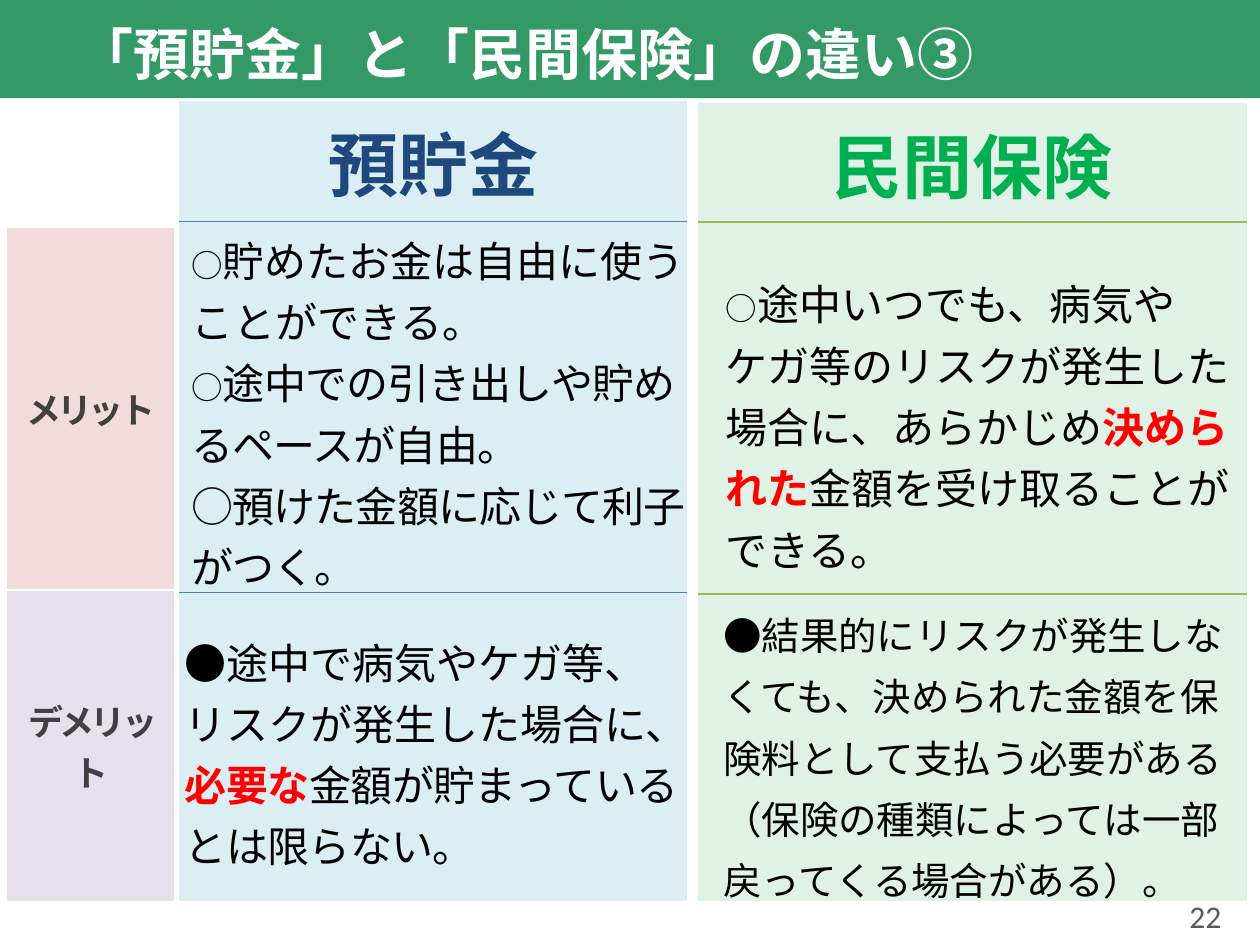
from lxml.etree import SubElement as Sub
from pptx import Presentation
from pptx.dml.color import RGBColor as Rgb
from pptx.enum.shapes import MSO_SHAPE as Geo
from pptx.enum.text import MSO_ANCHOR as Anchor, MSO_AUTO_SIZE as Fit, PP_ALIGN as Align
from pptx.oxml.ns import qn
from pptx.util import Cm, Pt

HUES = {
    "bar": "339966", "white": "FFFFFF", "black": "000000", "red": "FF0000",
    "gray": "595959", "dark": "404040",
    "navy": "1F497D", "sky": "DBEEF4", "blue": "4F81BD",
    "green": "00B050", "mint": "E0F1E6", "lime": "9BBB59",
    "pink": "F2DCDB", "lilac": "E6E0EC",
}
SANS = "Noto Sans CJK JP"


class Deck:
    """Holds the style and the current slide."""

    def __init__(self):
        self.prs = Presentation()
        self.prs.slide_width, self.prs.slide_height = Cm(25.4), Cm(19.05)
        self.slide = self.prs.slides.add_slide(self.prs.slide_layouts[5])

    def run(self, para, text, size, hue="black", bold=False, gap=0, font=SANS):
        run = para.add_run()
        run.text = text
        run.font.name, run.font.size, run.font.bold = font, Pt(size), bold
        run.font.color.rgb = Rgb.from_string(HUES[hue])
        props = run.font._element
        Sub(props, qn("a:ea")).set("typeface", font)
        if gap:
            props.set("spc", str(round(gap * 100)))

    def bar(self, box, hue):
        bar = self.slide.shapes.add_shape(Geo.RECTANGLE, *map(Cm, box))
        bar.shadow.inherit = False
        bar.fill.solid()
        bar.fill.fore_color.rgb = Rgb.from_string(HUES[hue])
        bar.line.fill.background()

    def title(self, box, text, size, hue):
        title = self.slide.shapes.title
        title.left, title.top, title.width, title.height = map(Cm, box)
        # Bring the title in front of the bar
        self.slide.shapes[-1].element.addnext(title.element)
        frame = title.text_frame
        frame.auto_size, frame.vertical_anchor = Fit.NONE, Anchor.MIDDLE
        para = frame.paragraphs[0]
        para.alignment = Align.LEFT
        self.run(para, text, size, hue, True)

    def text(self, box, paras, align=Align.LEFT, lead=35, anchor=Anchor.TOP):
        frame = self.slide.shapes.add_textbox(*map(Cm, box)).text_frame
        frame.word_wrap, frame.vertical_anchor = True, anchor
        for i, runs in enumerate(paras):
            para = frame.add_paragraph() if i else frame.paragraphs[0]
            para.alignment = align
            if lead:
                para.line_spacing = Pt(lead)
            for args in runs:
                self.run(para, *args)

    def edge(self, cell, lines):
        """Set the four cell borders; a side not in lines has none."""
        props = cell._tc.get_or_add_tcPr()
        for i, side in enumerate("LRTB"):
            line = Sub(props, qn(f"a:ln{side}"))
            props.insert(i, line)
            if side in lines:
                line.set("w", str(Pt(1)))
                fill = Sub(line, qn("a:solidFill"))
                Sub(fill, qn("a:srgbClr")).set("val", HUES[lines[side]])
            else:
                Sub(line, qn("a:noFill"))

    def table(self, box, rows, cells, rule, full=False):
        """Each cell is a fill and the run in it, if any."""
        table = self.slide.shapes.add_table(
            len(rows), 1, *map(Cm, box), Cm(sum(rows))).table
        table.first_row = table.horz_banding = False
        for i, (high, (fill, args)) in enumerate(zip(rows, cells)):
            table.rows[i].height = Cm(high)
            cell = table.cell(i, 0)
            cell.vertical_anchor = Anchor.MIDDLE
            cell.fill.solid()
            cell.fill.fore_color.rgb = Rgb.from_string(HUES[fill])
            if args:
                para = cell.text_frame.paragraphs[0]
                para.alignment = Align.CENTER
                self.run(para, *args)
            sides = "LRTB" if full else "T" * (i > 0) + "B" * (i < len(rows) - 1)
            self.edge(cell, dict.fromkeys(sides, rule))


def main():
    deck = Deck()

    # Insurance column
    deck.table((14.07, 2.08, 11.07), (2.4, 7.49, 6.2),
               [("mint", ("民間保険", 40, "green", True)),
                ("mint", None), ("mint", None)], "lime")

    # Title bar and page number
    deck.bar((0, 0, 25.4, 1.98), "bar")
    deck.title((1.3, 0.08, 19.43, 2), "「預貯金」と「民間保険」の違い③", 32, "white")
    deck.text((18.95, 17.96, 5.92, 1.02),
              [[("22", 18, "gray", False, 0, "Calibri")]],
              Align.RIGHT, None, Anchor.MIDDLE)

    # Savings column
    deck.table((3.61, 2.03, 10.24), (2.44, 7.47, 6.22),
               [("sky", ("預貯金", 40, "navy", True)),
                ("sky", None), ("sky", None)], "blue")

    # Row labels
    deck.table((0.13, 4.58, 3.4), (7.31, 6.28),
               [("pink", ("メリット", 20, "dark", True, -2.1)),
                ("lilac", ("デメリット", 20, "dark", True, -2.1))], "white", True)

    # Merits and drawbacks of savings
    deck.text((3.61, 4.4, 10.59, 7.62), [
        [("○", 18), ("貯めたお金は自由に使うことができる。", 24)],
        [("○", 18), ("途中での引き出しや貯めるペースが自由。", 24, "black", False, -0.5)],
        [("○預けた金額に応じて利子がつく。", 24, "black", False, -0.5)]])
    deck.text((3.48, 12.5, 10.59, 5.13), [
        [("●途中で病気やケガ等、リスクが発生した場合に、", 24),
         ("必要な", 24, "red", True, -0.4),
         ("金額が貯まっているとは限らない。", 24, "black", False, -0.4)]])

    # Merits and drawbacks of insurance
    deck.text((14.38, 5.28, 11.1, 5.11), [
        [("○", 18), ("途中いつでも、病気や　ケガ等のリスクが発生した場合に、あらかじめ", 24),
         ("決められた", 24, "red", True), ("金額を受け取ることができる。", 24)]])
    deck.text((14.33, 11.91, 11.1, 6.32), [
        [("●結果的にリスクが発生しなくても、決められた金額を保険料として支払う必要がある"
          "（保険の種類によっては一部戻ってくる場合がある）。", 22)]])

    deck.prs.save("out.pptx")


if __name__ == "__main__":
    main()
